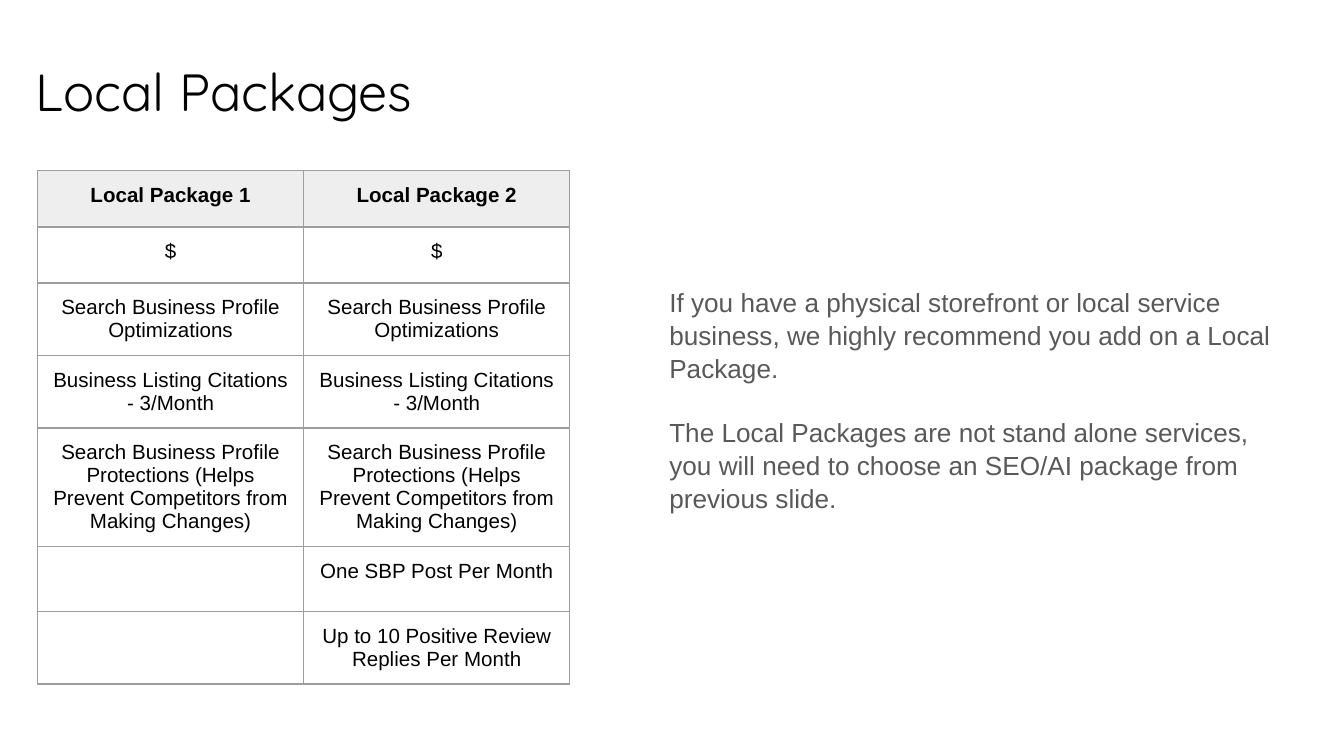
from lxml import etree
from pptx import Presentation
from pptx.dml import color
from pptx.enum import text
from pptx.oxml import ns
from pptx.util import Cm, Pt

COLORS = {"black": "000000", "grey": "595959", "header": "EEEEEE", "border": "9E9E9E"}
INSET = Cm(0.25)
FRAME = {
    "margin_left": INSET, "margin_right": INSET, "margin_top": INSET, "margin_bottom": INSET,
    "word_wrap": True, "vertical_anchor": text.MSO_ANCHOR.TOP,
    "auto_size": text.MSO_AUTO_SIZE.NONE,
}
CELL = {name: INSET for name in ("margin_left", "margin_right", "margin_top", "margin_bottom")}


def apply(target, values):
    for name, value in values.items():
        setattr(target, name, value)


def style_font(font, hue, **values):
    apply(font, values)
    font.color.rgb = color.RGBColor.from_string(COLORS[hue])


deck = Presentation()
deck.slide_width, deck.slide_height = Cm(25.4), Cm(14.29)
slide = deck.slides.add_slide(deck.slide_layouts[5])

# Title
title = slide.shapes.title
apply(title, {"left": Cm(0.43), "top": Cm(0.87), "width": Cm(23.98), "height": Cm(1.6)})
apply(title.text_frame, FRAME)
title.text_frame.text = "Local Packages"
heading = title.text_frame.paragraphs[0]
heading.alignment = text.PP_ALIGN.LEFT
style_font(heading.runs[0].font, "black", name="Quicksand", size=Pt(28))

# Package table: contents of both packages and row height in cm
shared = [
    ("$", 1.06),
    ("Search Business Profile Optimizations", 1.37),
    ("Business Listing Citations - 3/Month", 1.37),
    ("Search Business Profile Protections (Helps Prevent Competitors from Making Changes)", 2.24),
]
package_rows = [
    ("Local Package 1", "Local Package 2", 1.06),
    *[(service, service, height) for service, height in shared],
    ("", "One SBP Post Per Month", 1.23),
    ("", "Up to 10 Positive Review Replies Per Month", 1.37),
]
total_height = sum(row[-1] for row in package_rows)
packages = slide.shapes.add_table(
    len(package_rows), 2, Cm(0.71), Cm(3.23), Cm(10.06), Cm(total_height)).table
packages.horz_banding = False

for r, (*services, height) in enumerate(package_rows):
    packages.rows[r].height = Cm(height)
    for c, service in enumerate(services):
        cell = packages.cell(r, c)
        apply(cell, CELL)
        cell.text = service
        entry = cell.text_frame.paragraphs[0]
        entry.alignment = text.PP_ALIGN.CENTER
        style_font(entry.font, "black", name="Arial", size=Pt(11), bold=r == 0)
        for run in entry.runs:
            style_font(run.font, "black", name="Arial", size=Pt(11), bold=r == 0)

        # Borders come before the fill in the cell properties
        properties = cell._tc.get_or_add_tcPr()
        for side in ("a:lnL", "a:lnR", "a:lnT", "a:lnB"):
            border = etree.SubElement(properties, ns.qn(side), w=str(Pt(0.75)))
            paint = etree.SubElement(border, ns.qn("a:solidFill"))
            etree.SubElement(paint, ns.qn("a:srgbClr"), val=COLORS["border"])
        if r == 0:
            cell.fill.solid()
            cell.fill.fore_color.rgb = color.RGBColor.from_string(COLORS["header"])
        else:
            cell.fill.background()

# Recommendation beside the table
advice = [
    "If you have a physical storefront or local service business, "
    "we highly recommend you add on a Local Package.",
    "The Local Packages are not stand alone services, "
    "you will need to choose an SEO/AI package from previous slide.",
]
recommendation = slide.shapes.add_textbox(Cm(12.4), Cm(5.13), Cm(12.24), Cm(6.12)).text_frame
apply(recommendation, FRAME)
recommendation.text = "\n".join(advice)
for paragraph in recommendation.paragraphs:
    paragraph.line_spacing = 1.05
    style_font(paragraph.runs[0].font, "grey", name="Arial", size=Pt(14))
recommendation.paragraphs[0].space_after = Pt(16.8)

deck.save("out.pptx")
